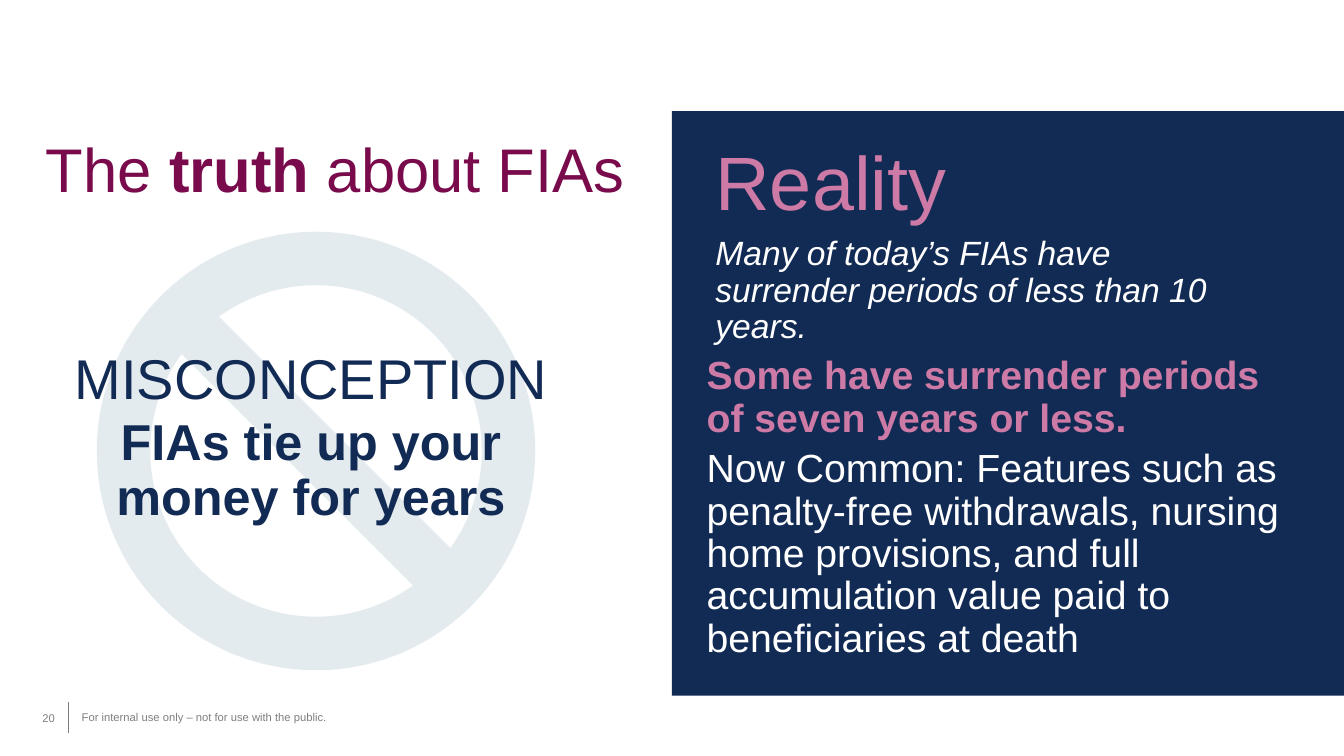
from lxml import etree
from pptx import Presentation
from pptx import util as u
from pptx.dml.color import RGBColor
from pptx.enum import shapes, text
from pptx.oxml.ns import qn

NAVY = RGBColor(0x12, 0x2B, 0x54)
PLUM = RGBColor(0x79, 0x0B, 0x4D)
PINK = RGBColor(0xCD, 0x7B, 0xA6)
MIST = RGBColor(0xCB, 0xD9, 0xE0)
GRAY = RGBColor(0x7F, 0x7F, 0x7F)
WHITE = RGBColor(0xFF, 0xFF, 0xFF)
CENTER = text.PP_ALIGN.CENTER
TOP, MIDDLE, BOTTOM = (
    text.MSO_ANCHOR.TOP, text.MSO_ANCHOR.MIDDLE, text.MSO_ANCHOR.BOTTOM)
TEXT_INSET = (0.25, 0.13, 0.25, 0.13)


def write(para, words, size, color, bold=False, italic=False):
    for index, line in enumerate(words.split("\n")):
        if index:
            para.add_line_break()
        span = para.add_run()
        span.text = line
        span.font.name = "Arial"
        span.font.size = u.Pt(size)
        span.font.color.rgb = color
        span.font.bold = bold
        span.font.italic = italic


class Page:
    """Draws styled elements on one slide."""

    def __init__(self, slide):
        self.shapes = slide.shapes

    def shape(self, kind, place, color, alpha=None):
        shape = self.shapes.add_shape(kind, *map(u.Cm, place))
        shape.shadow.inherit = False
        shape.fill.solid()
        shape.fill.fore_color.rgb = color
        shape.line.fill.background()
        if alpha is not None:
            tint = shape.fill._xPr.find(".//" + qn("a:srgbClr"))
            etree.SubElement(tint, qn("a:alpha"), val=str(alpha * 1000))
        return shape

    def line(self, start, end, color, width):
        line = self.shapes.add_connector(
            shapes.MSO_CONNECTOR.STRAIGHT, *map(u.Cm, start + end))
        line.line.color.rgb = color
        line.line.width = u.Pt(width)
        etree.SubElement(line._element.spPr, qn("a:effectLst"))

    def box(self, place, inset=(0, 0, 0, 0), anchor=TOP):
        frame = self.shapes.add_textbox(*map(u.Cm, place)).text_frame
        frame.word_wrap = True
        frame.vertical_anchor = anchor
        (frame.margin_left, frame.margin_top,
         frame.margin_right, frame.margin_bottom) = map(u.Cm, inset)
        return frame

    def para(self, box, words="", size=12, color=NAVY, align=None,
             spacing=None, before=None, **style):
        first = box.paragraphs[0]
        para = box.add_paragraph() if first.runs else first
        para.alignment = align
        para.line_spacing = spacing
        if before is not None:
            para.space_before = u.Pt(before)
        if words:
            write(para, words, size, color, **style)
        return para


def main():
    deck = Presentation()
    deck.slide_width, deck.slide_height = u.Cm(33.87), u.Cm(19.05)
    page = Page(deck.slides.add_slide(deck.slide_layouts[6]))

    footer = page.box((2.06, 17.75, 30.25, 0.66), (0, 0.15, 0.3, 0.15))
    page.para(footer, "For internal use only – not for use with the public.",
              size=8, color=GRAY)
    page.line((1.73, 17.68), (1.73, 18.47), GRAY, 0.75)
    number = page.box((1.07, 17.58, 1.02, 1.02), (0, 0.15, 0, 0.15), MIDDLE)
    page.para(number, "20", size=8, color=GRAY)

    sign = page.shape(shapes.MSO_SHAPE.NO_SYMBOL,
                      (2.44, 5.84, 11.05, 11.05), MIST, alpha=50)
    sign.adjustments[0] = 0.122

    title = page.para(page.box((1.09, 2.79, 14.73, 2.39), anchor=BOTTOM),
                      align=CENTER, spacing=0.9)
    for words, bold in (("The ", False), ("truth", True),
                        (" about FIAs", False)):
        write(title, words, 44, PLUM, bold=bold)

    myth = page.box((1.27, 8.33, 12.88, 6.12), (0.51, 0.51, 0.25, 0.25))
    page.para(myth, "MISCONCEPTION", size=40, align=CENTER, spacing=0.9)
    page.para(myth, "FIAs tie up your money for years", size=36,
              align=CENTER, spacing=0.9, before=4.4, bold=True)

    page.shape(shapes.MSO_SHAPE.RECTANGLE, (16.93, 2.8, 16.94, 14.73), NAVY)
    heading = page.box((17.78, 3.28, 6.4, 2.57), TEXT_INSET)
    page.para(heading, "Reality", size=54, color=PINK)

    facts = page.box((17.78, 8.97, 15.32, 8.51), (0.03, 0, 0, 0))
    page.para(facts, "Some have surrender periods\nof seven years or less.",
              size=28, color=PINK, spacing=0.9, bold=True)
    page.para(facts, "Now Common: Features such as penalty-free withdrawals, "
              "nursing home provisions, and full accumulation value paid to "
              "beneficiaries at death",
              size=28, color=WHITE, spacing=0.9, before=6)

    summary = page.box((17.78, 5.84, 13.23, 3.02), TEXT_INSET)
    page.para(summary, "Many of today’s FIAs have surrender periods of less "
              "than 10 years.",
              size=24, color=WHITE, spacing=0.9, italic=True)

    deck.save("out.pptx")


if __name__ == "__main__":
    main()
